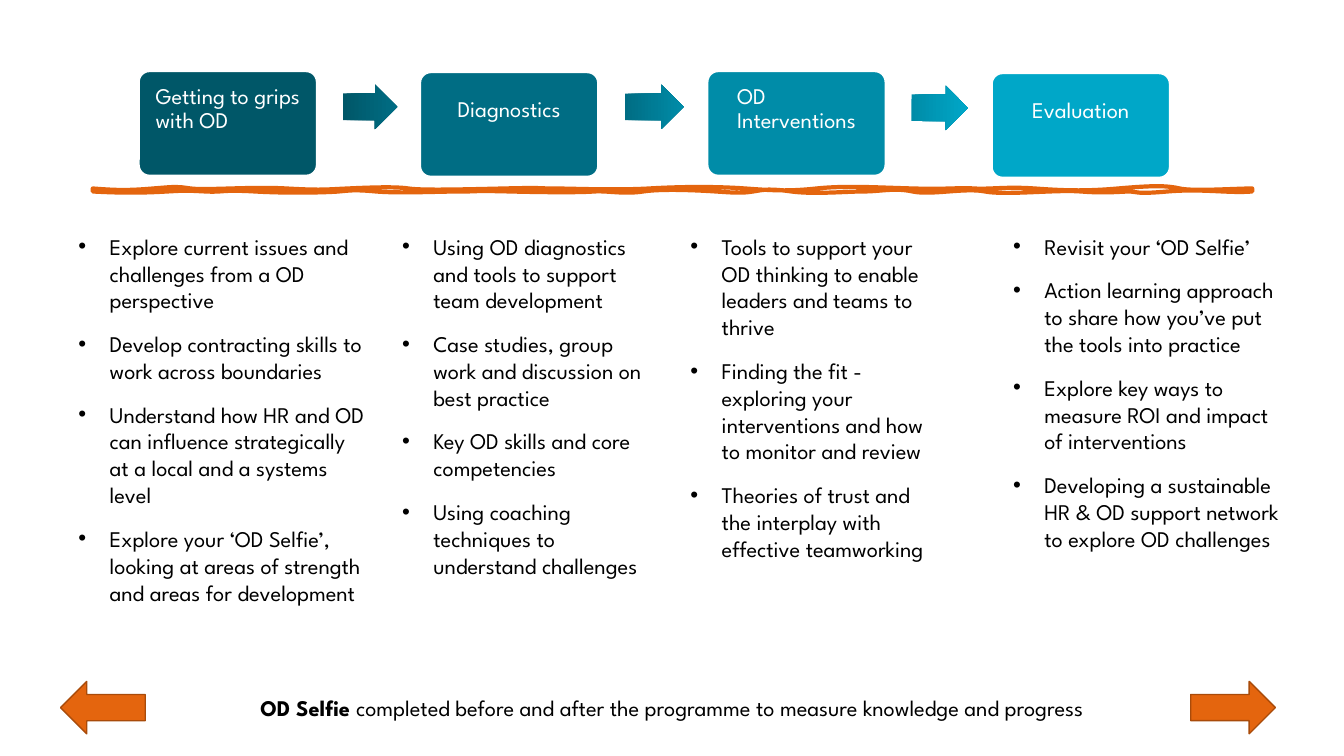
import pptx
import pptx.util
import pptx.dml.color
import pptx.enum.shapes
import pptx.enum.text
import lxml.etree

PX = 9144
FONT = "League Spartan"
RGBColor = pptx.dml.color.RGBColor
WHITE = RGBColor(0xFF, 0xFF, 0xFF)
BLACK = RGBColor(0x00, 0x00, 0x00)
ORANGE = RGBColor(0xE4, 0x65, 0x0E)
BROWN = RGBColor(0xA9, 0x4B, 0x0A)
TEALS = [RGBColor(0x00, 0x57, 0x68), RGBColor(0x00, 0x6D, 0x84),
         RGBColor(0x00, 0x8C, 0xA8), RGBColor(0x00, 0xA7, 0xC8)]
MSO_SHAPE = pptx.enum.shapes.MSO_SHAPE
DRAWING = "{http://schemas.openxmlformats.org/drawingml/2006/main}"

presentation = pptx.Presentation()
presentation.slide_width = 1333 * PX
presentation.slide_height = 750 * PX
slide = presentation.slides.add_slide(presentation.slide_layouts[6])


def add_preset(kind, left, top, width, height):
    shape = slide.shapes.add_shape(kind, left * PX, top * PX, width * PX, height * PX)
    shape.shadow.inherit = False
    return shape


def add_run(paragraph, text, color, bold=False):
    run = paragraph.add_run()
    run.text = text
    run.font.name = FONT
    run.font.size = pptx.util.Pt(16)
    run.font.bold = bold
    run.font.color.rgb = color


WAVE_LEFT, WAVE_TOP, WAVE_RIGHT, WAVE_BOTTOM = 92, 187, 1242, 190
WAVE_CURVES = [
    (117, 189, 128, 189, 152, 187), (176, 185, 175, 185, 189, 187),
    (204, 189, 249, 185, 284, 187), (319, 189, 323, 188, 345, 187),
    (367, 186, 392, 185, 405, 187), (418, 189, 458, 188, 500, 187),
    (542, 186, 530, 187, 549, 187), (567, 187, 609, 189, 644, 187),
    (678, 185, 711, 185, 739, 187), (766, 189, 782, 190, 810, 187),
    (839, 184, 869, 186, 905, 187), (942, 188, 950, 186, 966, 187),
    (982, 188, 998, 185, 1026, 187), (1054, 189, 1075, 190, 1109, 187),
    (1144, 184, 1157, 184, 1170, 187), (1183, 190, 1226, 187, 1242, 187),
    (1242, 188, 1242, 189, 1242, 190), (1219, 192, 1193, 187, 1158, 190),
    (1124, 193, 1129, 190, 1121, 190), (1113, 190, 1096, 192, 1072, 190),
    (1048, 188, 997, 194, 977, 190), (957, 186, 924, 194, 905, 190),
    (887, 186, 874, 190, 856, 190), (839, 190, 807, 193, 785, 190),
    (763, 187, 759, 188, 747, 190), (736, 192, 725, 191, 710, 190),
    (694, 189, 657, 187, 638, 190), (619, 193, 601, 189, 589, 190),
    (577, 191, 546, 191, 506, 190), (465, 189, 479, 190, 457, 190),
    (434, 190, 396, 192, 373, 190), (351, 188, 348, 189, 336, 190),
    (324, 191, 287, 192, 253, 190), (218, 188, 223, 191, 204, 190),
    (184, 189, 184, 189, 166, 190), (149, 191, 127, 192, 92, 190),
    (92, 189, 92, 188, 92, 187),
]
builder = slide.shapes.build_freeform(WAVE_LEFT, WAVE_TOP, scale=PX)
builder.add_line_segments([(WAVE_RIGHT, WAVE_BOTTOM)], close=True)
wave = builder.convert_to_shape()
wave.shadow.inherit = False
wave.fill.background()
wave.line.color.rgb = ORANGE
wave.line.width = pptx.util.Pt(3)
outline = next(wave.element.iter(DRAWING + "path"))
for segment in outline[1:]:
    outline.remove(segment)
for curve in WAVE_CURVES:
    segment = lxml.etree.SubElement(outline, DRAWING + "cubicBezTo")
    for x, y in zip(curve[::2], curve[1::2]):
        lxml.etree.SubElement(segment, DRAWING + "pt", x=str(x - WAVE_LEFT), y=str(y - WAVE_TOP))
lxml.etree.SubElement(outline, DRAWING + "close")

STAGES = [("Getting to grips with OD", 138, 71), ("Diagnostics", 417, 72),
          ("OD Interventions", 702, 71), ("Evaluation", 984, 73)]
for (title, left, top), teal in zip(STAGES, TEALS):
    card = add_preset(MSO_SHAPE.ROUNDED_RECTANGLE, left, top, 176, 103)
    card.adjustments[0] = 0.1
    card.fill.solid()
    card.fill.fore_color.rgb = teal
    card.line.color.rgb = WHITE
    card.line.width = pptx.util.Pt(1)
    label = slide.shapes.add_textbox(left * PX, top * PX, 176 * PX, 68 * PX)
    frame = label.text_frame
    frame.word_wrap = True
    frame.vertical_anchor = pptx.enum.text.MSO_ANCHOR.MIDDLE
    frame.margin_left = frame.margin_top = frame.margin_right = 13 * PX
    frame.margin_bottom = 7 * PX
    label.element.txBody.bodyPr.set("anchorCtr", "1")
    paragraph = frame.paragraphs[0]
    paragraph.line_spacing = 0.9
    add_run(paragraph, title, WHITE)

STAGE_ARROWS = [(340, 84, 54, 0.2), (620, 84, 58, 359.8), (904, 85, 56, 0.4)]
for (left, top, width, rotation), start, end in zip(STAGE_ARROWS, TEALS, TEALS[1:]):
    arrow = add_preset(MSO_SHAPE.RIGHT_ARROW, left, top, width, 44)
    arrow.rotation = rotation
    arrow.adjustments[0] = 0.6
    arrow.adjustments[1] = 0.5
    arrow.fill.gradient()
    arrow.fill.gradient_angle = 0
    for stop, color, position in zip(arrow.fill.gradient_stops, (start, end), (0, 1)):
        stop.color.rgb = color
        stop.position = position
    arrow.line.fill.background()

COLUMNS = [
    (68, 306, 438, [
        "Explore current issues and challenges from a OD perspective",
        "Develop contracting skills to work across boundaries",
        "Understand how HR and OD can influence strategically at a local and a systems level",
        "Explore your ‘OD Selfie’, looking at areas of strength and areas for development"]),
    (389, 269, 411, [
        "Using OD diagnostics and tools to support team development",
        "Case studies, group work and discussion on best practice",
        "Key OD skills and core competencies",
        "Using coaching techniques to understand challenges"]),
    (675, 258, 421, [
        "Tools to support your OD thinking to enable leaders and teams to thrive",
        "Finding the fit - exploring your interventions and how to monitor and review",
        "Theories of trust and the interplay with effective teamworking"]),
    (995, 292, 438, [
        "Revisit your ‘OD Selfie’",
        "Action learning approach to share how you’ve put the tools into practice",
        "Explore key ways to measure ROI and impact of interventions",
        "Developing a sustainable HR & OD support network to explore OD challenges"]),
]
for left, width, height, points in COLUMNS:
    column = slide.shapes.add_textbox(left * PX, 226 * PX, width * PX, height * PX)
    frame = column.text_frame
    frame.word_wrap = True
    for index, point in enumerate(points):
        paragraph = frame.add_paragraph() if index else frame.paragraphs[0]
        paragraph.space_after = pptx.util.Pt(12)
        properties = paragraph._p.get_or_add_pPr()
        properties.set("marL", str(31 * PX))
        properties.set("indent", str(-31 * PX))
        lxml.etree.SubElement(properties, DRAWING + "buFont", typeface="Arial")
        lxml.etree.SubElement(properties, DRAWING + "buChar", char="•")
        add_run(paragraph, point, BLACK)

footer = slide.shapes.add_textbox(137 * PX, 684 * PX, 1059 * PX, 37 * PX)
footer.text_frame.word_wrap = True
paragraph = footer.text_frame.paragraphs[0]
paragraph.alignment = pptx.enum.text.PP_ALIGN.CENTER
add_run(paragraph, "OD Selfie ", BLACK, bold=True)
add_run(paragraph, "completed before and after the programme to measure knowledge and progress", BLACK)

for left, rotation in [(1181, 0), (60, 180)]:
    arrow = add_preset(MSO_SHAPE.RIGHT_ARROW, left, 676, 84, 52)
    arrow.rotation = rotation
    arrow.fill.solid()
    arrow.fill.fore_color.rgb = ORANGE
    arrow.line.color.rgb = BROWN
    arrow.line.width = pptx.util.Pt(1)

presentation.save("out.pptx")
